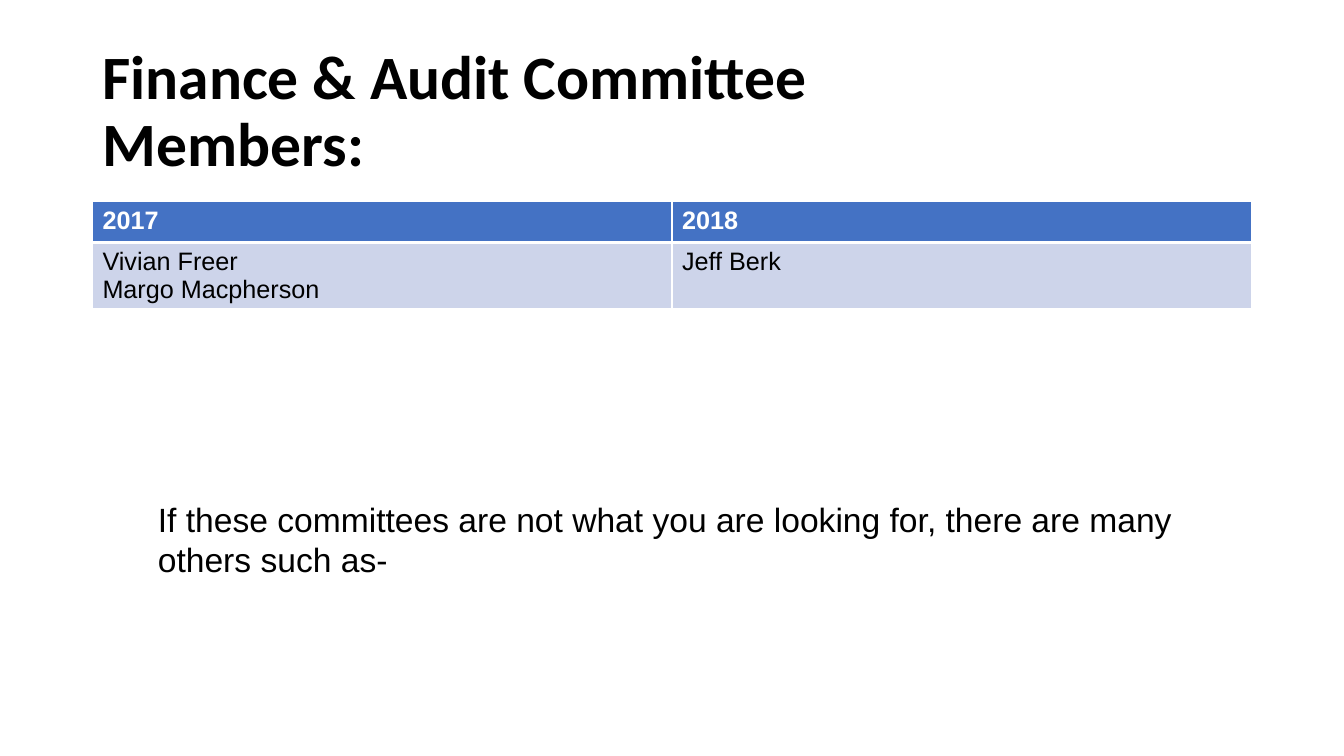
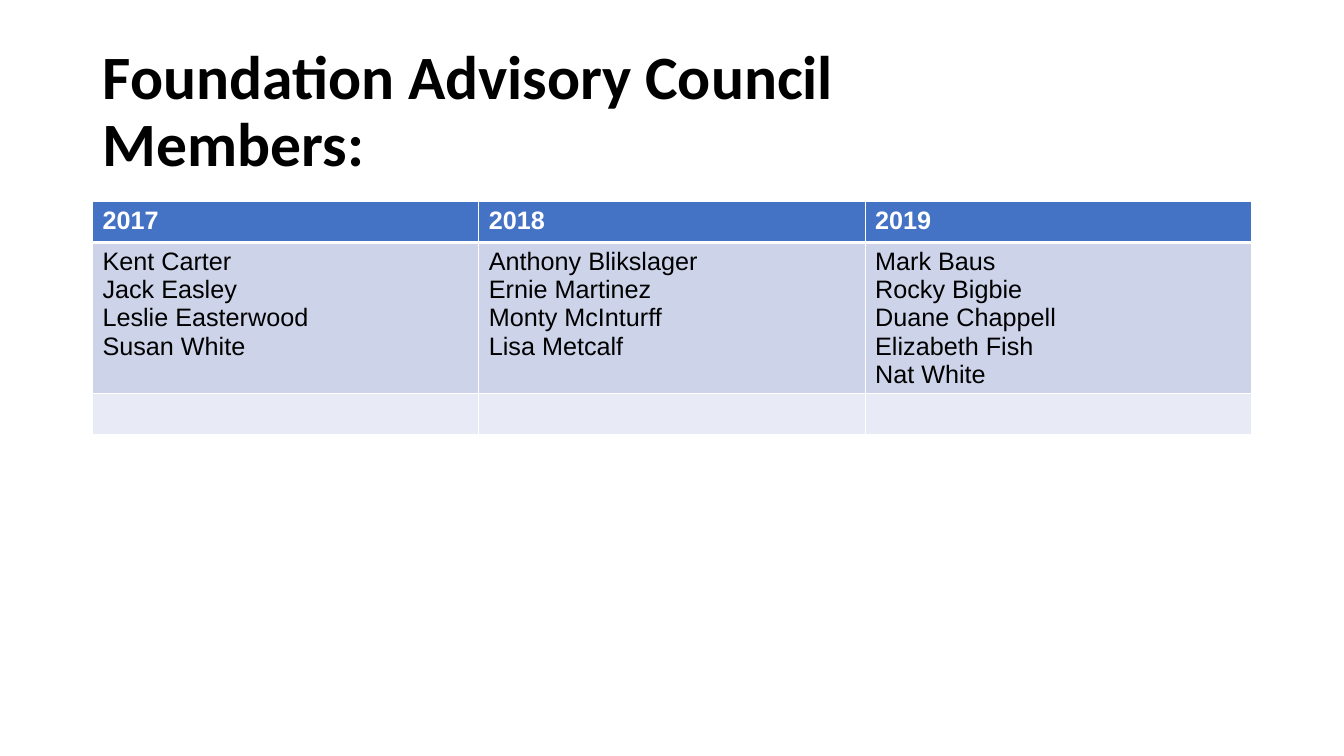
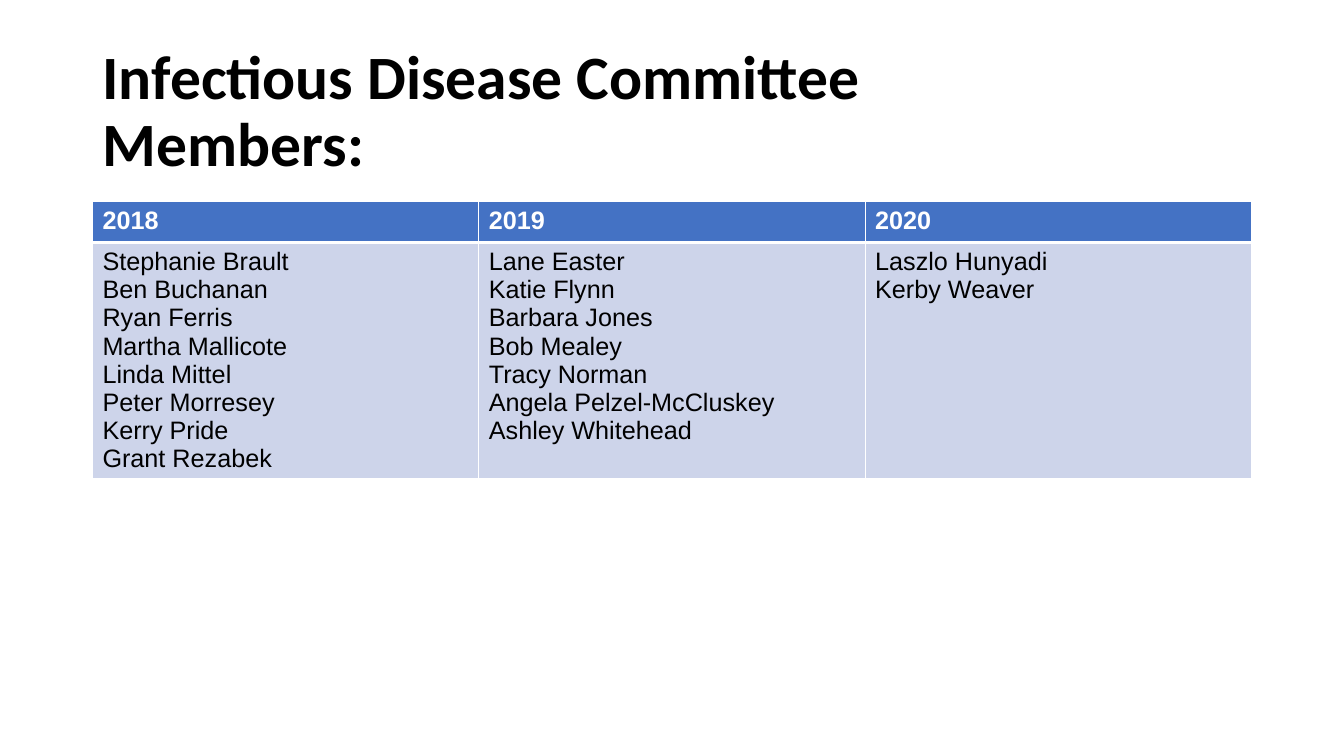
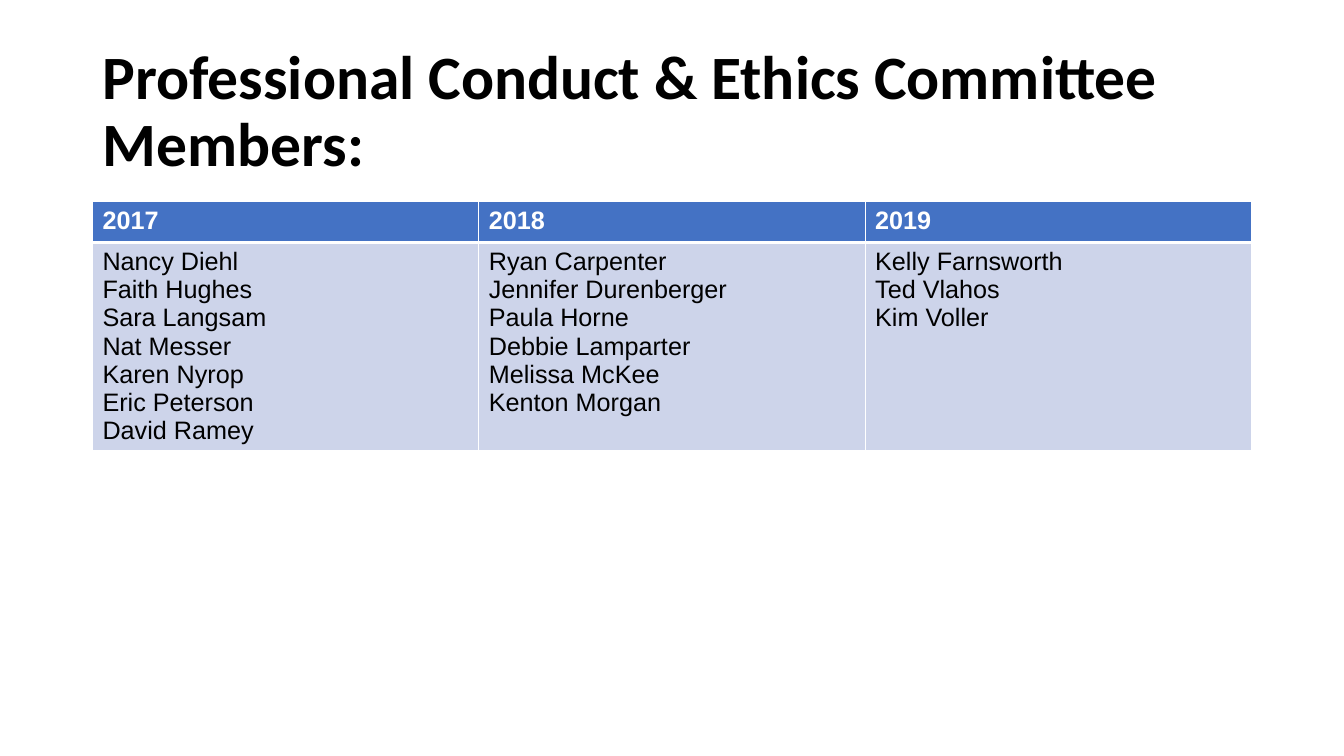
"""Build four committee member slides, each with a title and a table by year."""
from dataclasses import dataclass

from lxml.etree import SubElement
from pptx import Presentation
from pptx.dml.color import RGBColor
from pptx.enum.text import MSO_ANCHOR as Anchor, MSO_AUTO_SIZE as AutoSize, PP_ALIGN as Align
from pptx.oxml.ns import qn
from pptx.presentation import Presentation as Deck
from pptx.slide import Slide
from pptx.table import _Cell as Cell
from pptx.text.text import TextFrame
from pptx.util import Cm, Pt

COLORS = {
    "text": "000000",
    "header_text": "FFFFFF",
    "border": "FFFFFF",
    "header": "4472C4",
    "band_dark": "CDD4EA",
    "band_light": "E8EBF5",
}
TITLE_FONT = "Calibri"
BODY_FONT = "Arial"
TITLE_ONLY = 5
LEFT = Cm(2.33)
CONTENT_WIDTH = Cm(29.21)
ROW_HEIGHT = Cm(1.03)
THIN, THICK = Pt(1), Pt(3)


@dataclass(frozen=True)
class Committee:
    """A committee with its members grouped by year."""

    name: str
    members: dict[str, list[str]]
    spare_rows: int = 0
    closing: str = ""


COMMITTEES = [
    Committee(
        "Finance & Audit Committee",
        {"2017": ["Vivian Freer", "Margo Macpherson"], "2018": ["Jeff Berk"]},
        closing="If these committees are not what you are looking for, "
        "there are many others such as-",
    ),
    Committee(
        "Foundation Advisory Council",
        {
            "2017": ["Kent Carter", "Jack Easley", "Leslie Easterwood", "Susan White"],
            "2018": ["Anthony Blikslager", "Ernie Martinez", "Monty McInturff", "Lisa Metcalf"],
            "2019": ["Mark Baus", "Rocky Bigbie", "Duane Chappell", "Elizabeth Fish", "Nat White"],
        },
        spare_rows=1,
    ),
    Committee(
        "Infectious Disease Committee",
        {
            "2018": ["Stephanie Brault", "Ben Buchanan", "Ryan Ferris", "Martha Mallicote",
                     "Linda Mittel", "Peter Morresey", "Kerry Pride", "Grant Rezabek"],
            "2019": ["Lane Easter", "Katie Flynn", "Barbara Jones", "Bob Mealey",
                     "Tracy Norman", "Angela Pelzel-McCluskey", "Ashley Whitehead"],
            "2020": ["Laszlo Hunyadi", "Kerby Weaver"],
        },
    ),
    Committee(
        "Professional Conduct & Ethics Committee",
        {
            "2017": ["Nancy Diehl", "Faith Hughes", "Sara Langsam", "Nat Messer",
                     "Karen Nyrop", "Eric Peterson", "David Ramey"],
            "2018": ["Ryan Carpenter", "Jennifer Durenberger", "Paula Horne",
                     "Debbie Lamparter", "Melissa McKee", "Kenton Morgan"],
            "2019": ["Kelly Farnsworth", "Ted Vlahos", "Kim Voller"],
        },
    ),
]


def color(name: str) -> RGBColor:
    """Return a named colour."""
    return RGBColor.from_string(COLORS[name])


def write(frame: TextFrame, text: str, font: str, size: int,
          color_name: str = "text", bold: bool = False) -> None:
    """Write one left-aligned paragraph, keeping its line breaks."""
    paragraph = frame.paragraphs[0]
    paragraph.text = text
    paragraph.alignment = Align.LEFT
    for run in paragraph.runs:
        run.font.name = font
        run.font.size = Pt(size)
        run.font.bold = bold
        run.font.color.rgb = color(color_name)


def add_title(slide: Slide, name: str) -> None:
    """Place and format the slide title."""
    title = slide.shapes.title
    title.left, title.top, title.width, title.height = LEFT, Cm(1.01), CONTENT_WIDTH, Cm(3.68)
    frame = title.text_frame
    frame.auto_size = AutoSize.NONE
    frame.vertical_anchor = Anchor.MIDDLE
    write(frame, f"{name}\nMembers:", TITLE_FONT, 44, bold=True)
    frame.paragraphs[0].line_spacing = 0.9


def style_cell(cell: Cell, fill: str, top: int, bottom: int) -> None:
    """Give a cell its borders and fill."""
    properties = cell._tc.get_or_add_tcPr()
    for side, width in {"lnL": THIN, "lnR": THIN, "lnT": top, "lnB": bottom}.items():
        line = SubElement(properties, qn(f"a:{side}"), w=str(width))
        solid = SubElement(line, qn("a:solidFill"))
        SubElement(solid, qn("a:srgbClr"), val=COLORS["border"])
    cell.fill.solid()
    cell.fill.fore_color.rgb = color(fill)


def add_members(slide: Slide, committee: Committee) -> None:
    """Add the table with one column for each year."""
    row_count = 2 + committee.spare_rows
    column_count = len(committee.members)
    table = slide.shapes.add_table(row_count, column_count, LEFT, Cm(5.08),
                                   CONTENT_WIDTH, ROW_HEIGHT * row_count).table
    table.horz_banding = False
    for row_index in range(row_count):
        fill = "header" if row_index == 0 else ("band_light", "band_dark")[row_index % 2]
        top = THICK if row_index == 1 else THIN
        bottom = THICK if row_index == 0 else THIN
        for column_index in range(column_count):
            style_cell(table.cell(row_index, column_index), fill, top, bottom)
    for column_index, (year, names) in enumerate(committee.members.items()):
        write(table.cell(0, column_index).text_frame, year, BODY_FONT, 18, "header_text", True)
        write(table.cell(1, column_index).text_frame, "\n".join(names), BODY_FONT, 18)


def add_closing(slide: Slide, text: str) -> None:
    """Add the closing sentence below the table."""
    frame = slide.shapes.add_textbox(Cm(3.73), Cm(12.32), Cm(27.18), Cm(3.18)).text_frame
    frame.word_wrap = True
    frame.margin_top = frame.margin_bottom = Cm(0.25)
    write(frame, text, BODY_FONT, 24)


def add_committee(presentation: Deck, committee: Committee) -> None:
    """Add the slide of one committee."""
    slide = presentation.slides.add_slide(presentation.slide_layouts[TITLE_ONLY])
    add_title(slide, committee.name)
    add_members(slide, committee)
    if committee.closing:
        add_closing(slide, committee.closing)


def main() -> None:
    """Build and save the presentation."""
    presentation = Presentation()
    presentation.slide_width, presentation.slide_height = Cm(33.87), Cm(19.05)
    for committee in COMMITTEES:
        add_committee(presentation, committee)
    presentation.save("out.pptx")


if __name__ == "__main__":
    main()
